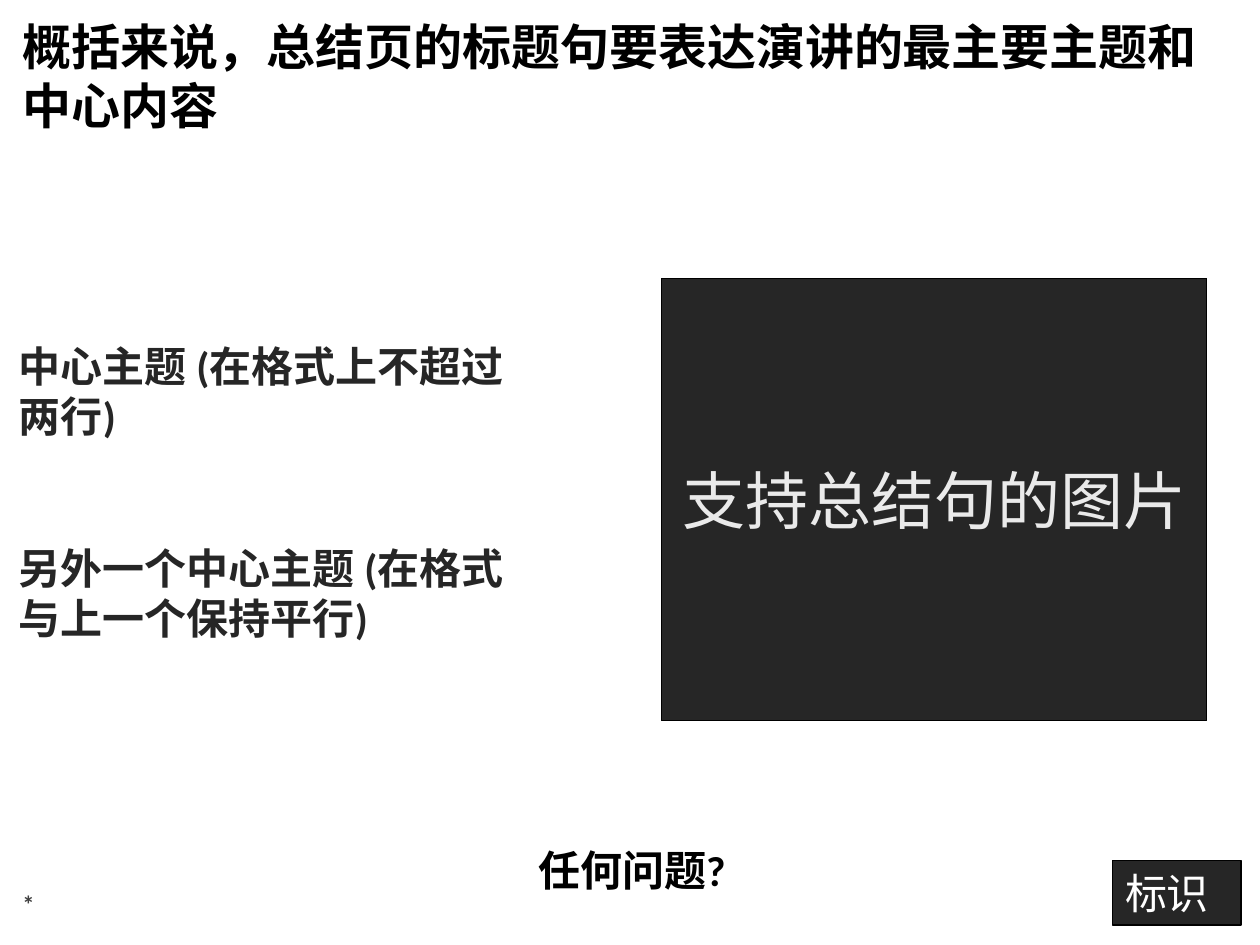
from pptx import Presentation
from pptx.dml.color import RGBColor
from pptx.enum.shapes import MSO_SHAPE
from pptx.enum.text import MSO_ANCHOR, PP_ALIGN
from pptx.util import Cm, Pt

RECT = MSO_SHAPE.RECTANGLE
TOP, MIDDLE, BOTTOM = MSO_ANCHOR.TOP, MSO_ANCHOR.MIDDLE, MSO_ANCHOR.BOTTOM
LEFT, CENTER = PP_ALIGN.LEFT, PP_ALIGN.CENTER
FONT = "Calibri"
BLACK, DARK, GREY, LIGHT, WHITE = "000000", "262626", "404040", "EAEAEA", "FFFFFF"


def rgb(value):
    return RGBColor.from_string(value)


def write(sp, *lines, size=24, color=BLACK, bold=False, align=LEFT,
          anchor=TOP, inset=(0.25, 0.13), gap=0):
    tf = sp.text_frame
    tf.word_wrap = True
    tf.vertical_anchor = anchor
    tf.margin_left = tf.margin_right = Cm(inset[0])
    tf.margin_top = tf.margin_bottom = Cm(inset[1])
    for i, line in enumerate(lines):
        p = tf.add_paragraph() if i else tf.paragraphs[0]
        p.alignment = align
        p.space_before = Pt(gap if i else 0)
        r = p.add_run()
        r.text = line
        r.font.name = FONT
        r.font.size = Pt(size)
        r.font.bold = bold
        r.font.color.rgb = rgb(color)


def add_text(slide, box, *lines, **fmt):
    sp = slide.shapes.add_textbox(*map(Cm, box))
    write(sp, *lines, **fmt)


def add_panel(slide, box, text, **fmt):
    sp = slide.shapes.add_shape(RECT, *map(Cm, box))
    sp.shadow.inherit = False
    sp.fill.solid()
    sp.fill.fore_color.rgb = rgb(DARK)
    sp.line.color.rgb = rgb(BLACK)
    sp.line.width = Pt(0.75)
    write(sp, text, **fmt)


def add_title(slide, box):
    add_text(slide, box, "概括来说，总结页的标题句要表达演讲的最主要主题和中心内容",
             size=28, bold=True)


def add_body(slide, box):
    x, y, w, h = box
    add_text(slide, (x, y + 1.17, 10.59, 6.3),
             "中心主题 (在格式上不超过两行)",
             "另外一个中心主题 (在格式与上一个保持平行)",
             color=DARK, bold=True, inset=(0.18, 0.08), gap=58)
    add_panel(slide, (x + w - 11, y, 11, h), "支持总结句的图片",
              size=36, color=LIGHT, align=CENTER, anchor=MIDDLE)


def add_footer(slide, box):
    x, y, w, h = box
    add_text(slide, (x, y + h - 1.02, 5.92, 1.02), "*",
             size=14, color=GREY, bold=True, anchor=BOTTOM)
    add_text(slide, (x + 10.29, y, 4.5, 1.3), "任何问题?",
             bold=True, align=CENTER)
    add_panel(slide, (x + w - 2.59, y + h - 1.3, 2.59, 1.3), "标识",
              color=WHITE)


def main():
    prs = Presentation()
    prs.slide_width, prs.slide_height = Cm(25.4), Cm(19.05)
    slide = prs.slides.add_slide(prs.slide_layouts[6])
    add_title(slide, (0.2, 0.2, 25, 2.62))
    add_body(slide, (0.2, 5.61, 24.13, 8.92))
    add_footer(slide, (0.2, 16.89, 24.82, 1.76))
    prs.save("out.pptx")


if __name__ == "__main__":
    main()
